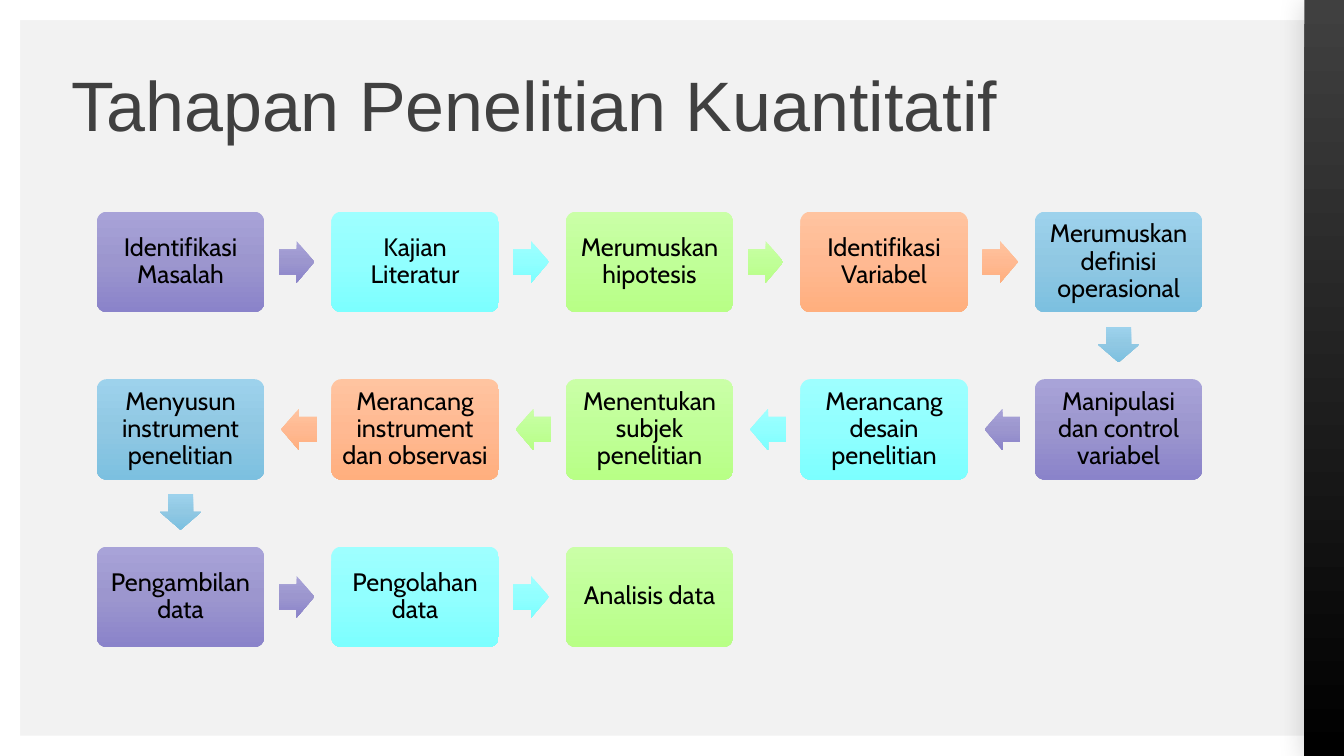
from pptx import Presentation
from pptx.dml.color import RGBColor
from pptx.enum.shapes import MSO_SHAPE
from pptx.enum.text import MSO_ANCHOR, PP_ALIGN
from pptx.oxml import parse_xml
from pptx.oxml.ns import nsdecls
from pptx.util import Cm, Pt

RECT, ROUND, ARROW = MSO_SHAPE.RECTANGLE, MSO_SHAPE.ROUNDED_RECTANGLE, MSO_SHAPE.RIGHT_ARROW
TOP, MIDDLE = MSO_ANCHOR.TOP, MSO_ANCHOR.MIDDLE
LEFT, CENTER = PP_ALIGN.LEFT, PP_ALIGN.CENTER

WHITE = RGBColor(0xFF, 0xFF, 0xFF)
BLACK = RGBColor(0x00, 0x00, 0x00)
GREY = RGBColor(0x40, 0x40, 0x40)
PALE = RGBColor(0xF2, 0xF2, 0xF2)
PURPLE = RGBColor(0xA8, 0xA3, 0xD8), RGBColor(0x9C, 0x96, 0xCE), RGBColor(0x8A, 0x83, 0xCA)
CYAN = RGBColor(0x9E, 0xFF, 0xFF), RGBColor(0x91, 0xFF, 0xFF), RGBColor(0x7C, 0xFF, 0xFF)
GREEN = RGBColor(0xCA, 0xFF, 0xA7), RGBColor(0xC0, 0xFF, 0x98), RGBColor(0xB8, 0xFF, 0x86)
ORANGE = RGBColor(0xFF, 0xC4, 0xA0), RGBColor(0xFF, 0xB9, 0x92), RGBColor(0xFF, 0xAF, 0x7E)
BLUE = RGBColor(0x9D, 0xD2, 0xEC), RGBColor(0x90, 0xC8, 0xE3), RGBColor(0x7C, 0xC0, 0xE0)
HUES = [PURPLE, CYAN, GREEN, ORANGE, BLUE]

WIDE, HIGH = 33.87, 19.05
EDGE, PANEL = 0.51, 1.0                # white frame, dark side panel
COLS, STEP_X, STEP_Y = 5, 5.91, 4.22   # grid of steps
MID_X, MID_Y = 4.55, 6.6               # centre of the first step
BOX_W, BOX_H = 4.22, 2.53
TIP_W, TIP_H, SHIFT = 0.9, 1.05, 0.03  # arrow size, pull towards its start

STEPS = [
    "Identifikasi Masalah", "Kajian Literatur", "Merumuskan hipotesis",
    "Identifikasi Variabel", "Merumuskan definisi operasional",
    "Manipulasi dan control variabel", "Merancang desain penelitian",
    "Menentukan subjek penelitian", "Merancang instrument dan observasi",
    "Menyusun instrument penelitian", "Pengambilan data",
    "Pengolahan data", "Analisis data",
]


class Deck:
    def __init__(self):
        self.prs = Presentation()
        self.prs.slide_width, self.prs.slide_height = Cm(WIDE), Cm(HIGH)
        self.slide = self.prs.slides.add_slide(self.prs.slide_layouts[6])
        back = self.slide.background.fill
        back.solid()
        back.fore_color.rgb = PALE

    def shape(self, kind, x, y, w, h, fill, adjust=()):
        """Preset shape; fill is one colour or a tuple of gradient colours."""
        item = self.slide.shapes.add_shape(kind, Cm(x), Cm(y), Cm(w), Cm(h))
        for i, value in enumerate(adjust):
            item.adjustments[i] = value
        if isinstance(fill, RGBColor):
            item.fill.solid()
            item.fill.fore_color.rgb = fill
        else:
            last = len(fill) - 1
            stops = "".join(
                f'<a:gs pos="{100000 * i // last}"><a:srgbClr val="{tone}"/></a:gs>'
                for i, tone in enumerate(fill))
            item._element.spPr.insert(2, parse_xml(
                f'<a:gradFill {nsdecls("a")} rotWithShape="0"><a:gsLst>{stops}</a:gsLst>'
                '<a:lin ang="5400000" scaled="0"/></a:gradFill>'))
        item.line.fill.background()
        item.shadow.inherit = False
        return item

    def shade(self, item):
        item._element.spPr.effectLst.append(parse_xml(
            f'<a:outerShdw {nsdecls("a")} blurRad="228600" dist="38100" dir="8100000">'
            '<a:srgbClr val="000000"><a:alpha val="15000"/></a:srgbClr></a:outerShdw>'))

    def label(self, item, text, font, size, color, align, anchor, inset):
        frame = item.text_frame
        pad = Cm(inset)
        look = dict(word_wrap=True, vertical_anchor=anchor, margin_left=pad,
                    margin_right=pad, margin_top=pad, margin_bottom=pad)
        para = frame.paragraphs[0]
        run = para.add_run()
        run.text = text
        for part, style in ((frame, look),
                            (para, dict(alignment=align, line_spacing=0.9)),
                            (run.font, dict(name=font, size=Pt(size)))):
            for key, value in style.items():
                setattr(part, key, value)
        run.font.color.rgb = color

    def title(self, text):
        item = self.slide.shapes.add_textbox(Cm(1.8), Cm(1.8), Cm(28.5), Cm(2))
        self.label(item, text, "Arial", 50, GREY, LEFT, TOP, 0)

    def step(self, x, y, text, hue):
        item = self.shape(ROUND, x - BOX_W / 2, y - BOX_H / 2, BOX_W, BOX_H, hue, [0.1])
        self.label(item, text, "Cabin", 18, BLACK, CENTER, MIDDLE, 0.18)

    def arrow(self, start, end, hue):
        (x1, y1), (x2, y2) = start, end
        turn = 90 if y2 > y1 else 180 if x2 < x1 else 0
        dx, dy = {0: (1, 0), 90: (0, 1), 180: (-1, 0)}[turn]
        x = (x1 + x2) / 2 - SHIFT * dx
        y = (y1 + y2) / 2 - SHIFT * dy
        item = self.shape(ARROW, x - TIP_W / 2, y - TIP_H / 2, TIP_W, TIP_H, hue, [0.6, 0.5])
        item.rotation = turn


def place(i):
    """Centre of step i; every second row runs backwards."""
    row, col = divmod(i, COLS)
    if row % 2:
        col = COLS - 1 - col
    return MID_X + col * STEP_X, MID_Y + row * STEP_Y


def main():
    deck = Deck()

    # Frame and side panel
    for y in (HIGH - EDGE, 0):
        deck.shape(RECT, 0, y, WIDE, EDGE, WHITE)
    deck.shade(deck.shape(RECT, WIDE - PANEL, 0, PANEL, HIGH, (GREY, BLACK)))
    deck.shape(RECT, 0, 0, EDGE, HIGH, WHITE)

    deck.title("Tahapan Penelitian Kuantitatif")

    # Steps, each with an arrow to the next
    for i, text in enumerate(STEPS):
        hue = HUES[i % len(HUES)]
        deck.step(*place(i), text, hue)
        if i + 1 < len(STEPS):
            deck.arrow(place(i), place(i + 1), hue)

    deck.prs.save("out.pptx")


if __name__ == "__main__":
    main()
